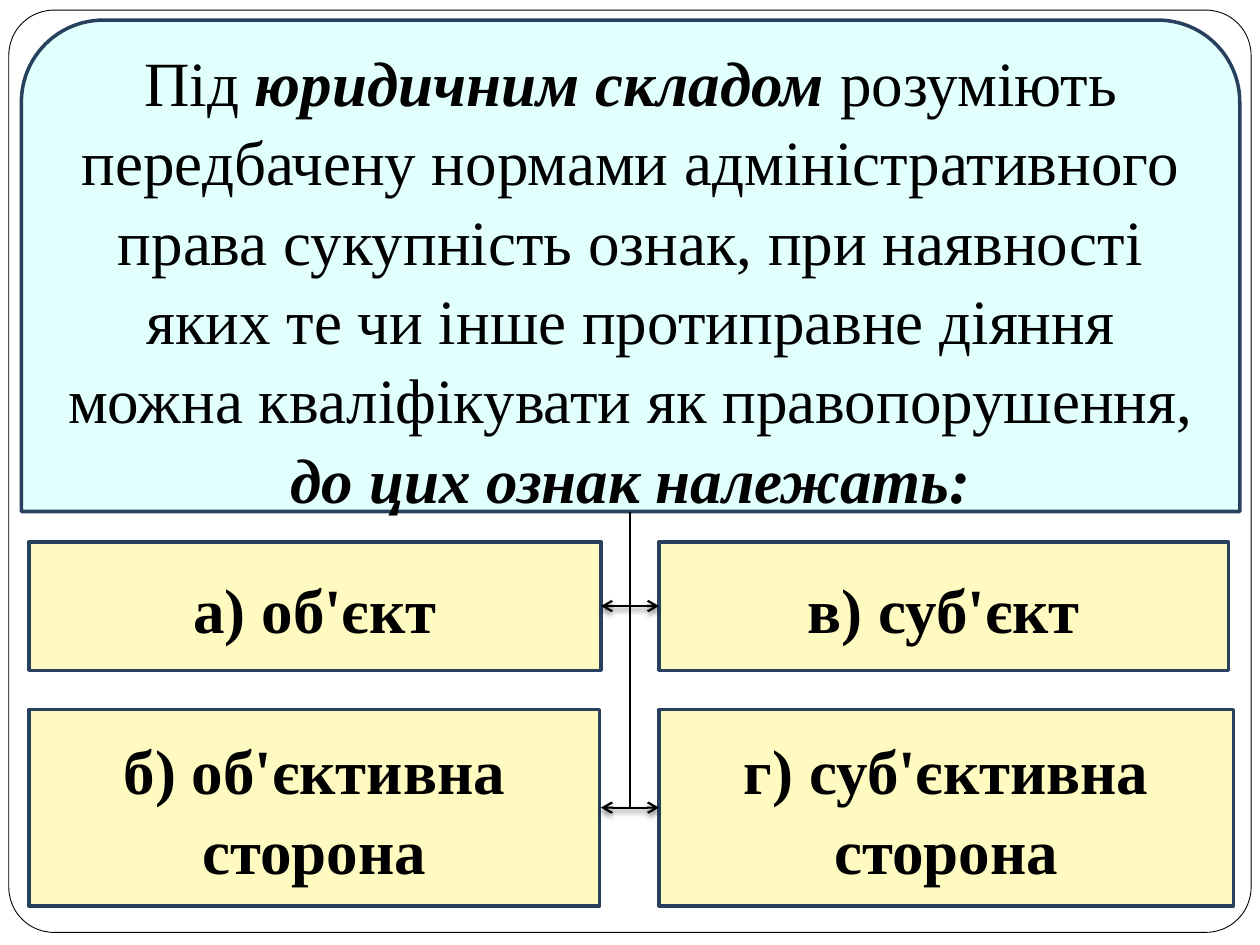
from lxml.etree import SubElement
from pptx import Presentation
from pptx.dml.color import RGBColor
from pptx.enum.shapes import MSO_CONNECTOR, MSO_SHAPE
from pptx.enum.text import MSO_ANCHOR, PP_ALIGN
from pptx.oxml.ns import qn
from pptx.util import Inches, Pt

COLORS = {"paper": "FFFFFF", "ink": "000000", "border": "27405E",
          "definition": "E1FFFC", "element": "FFFAC0"}
FONT = "Times New Roman"
LEFT, RIGHT, AXIS = 0.23, 5.23, 5
DEFINITION = [
    [("Під ", False), ("юридичним складом", True),
     (" розуміють передбачену нормами адміністративного права сукупність ознак, "
      "при наявності яких те чи інше протиправне діяння можна кваліфікувати "
      "як правопорушення,", False)],
    [("до цих ознак належать:", True)],
]
ROWS = [
    (4.3, 1.02, [(LEFT, 4.54, "а) об'єкт"), (RIGHT, 4.52, "в) суб'єкт")]),
    (5.63, 1.56, [(LEFT, 4.53, "б) об'єктивна сторона"),
                  (RIGHT, 4.56, "г) суб'єктивна сторона")]),
]
ARROW_HEIGHTS = [4.81, 6.41]


def color(name):
    """Return the named palette colour."""
    return RGBColor.from_string(COLORS[name])


def add_box(slide, kind, area, fill, line="border", width=2):
    """Add a filled, outlined shape without a shadow."""
    box = slide.shapes.add_shape(kind, *map(Inches, area))
    box.shadow.inherit = False
    box.fill.solid()
    box.fill.fore_color.rgb = color(fill)
    box.line.color.rgb = color(line)
    box.line.width = Pt(width)
    return box


def write(box, paragraphs, italic=True):
    """Write centred paragraphs of (text, emphasised) spans."""
    frame = box.text_frame
    frame.word_wrap = True
    frame.vertical_anchor = MSO_ANCHOR.MIDDLE
    for index, spans in enumerate(paragraphs):
        para = frame.add_paragraph() if index else frame.paragraphs[0]
        para.alignment = PP_ALIGN.CENTER
        para.line_spacing = 1.05
        for text, strong in spans:
            span = para.add_run()
            span.text = text
            font = span.font
            font.name, font.size = FONT, Pt(36)
            font.bold, font.italic = strong, strong and italic
            font.color.rgb = color("ink")


def add_line(slide, start, end):
    """Add a thin line and return it with its empty effect list."""
    line = slide.shapes.add_connector(
        MSO_CONNECTOR.STRAIGHT, *map(Inches, start + end))
    line.line.color.rgb = color("ink")
    line.line.width = Pt(1.25)
    effects = SubElement(line._element.spPr, qn("a:effectLst"))
    return line, effects


def add_double_arrow(slide, start, end):
    """Add a line with open arrowheads at both ends and a soft shadow."""
    line, effects = add_line(slide, start, end)
    for end_name in ("a:headEnd", "a:tailEnd"):
        SubElement(line.line._get_or_add_ln(), qn(end_name), type="arrow")
    shadow = SubElement(effects, qn("a:outerShdw"), blurRad=str(Pt(3)),
                        dist=str(Pt(2)), dir="5400000", rotWithShape="0")
    tint = SubElement(shadow, qn("a:srgbClr"), val=COLORS["ink"])
    SubElement(tint, qn("a:alpha"), val="50000")


def main():
    """Build the slide on the elements of an offence."""
    deck = Presentation()
    deck.slide_width, deck.slide_height = Inches(10), Inches(7.5)
    page = deck.slides.add_slide(deck.slide_layouts[6])

    frame = add_box(page, MSO_SHAPE.ROUNDED_RECTANGLE,
                    (0.07, 0.08, 9.86, 7.32), "paper", "ink", 0.5)
    frame.adjustments[0] = 0.049

    definition = add_box(page, MSO_SHAPE.ROUND_2_SAME_RECTANGLE,
                         (0.17, 0.16, 9.67, 3.9), "definition")
    write(definition, DEFINITION)

    for top, height, cells in ROWS:
        for left, width, label in cells:
            box = add_box(page, MSO_SHAPE.RECTANGLE,
                          (left, top, width, height), "element")
            write(box, [[(label, True)]], italic=False)

    for height in ARROW_HEIGHTS:
        add_double_arrow(page, (LEFT + 4.54, height), (RIGHT, height))
    add_line(page, (AXIS, ARROW_HEIGHTS[-1]), (AXIS, 4.06))
    deck.save("out.pptx")


if __name__ == "__main__":
    main()
